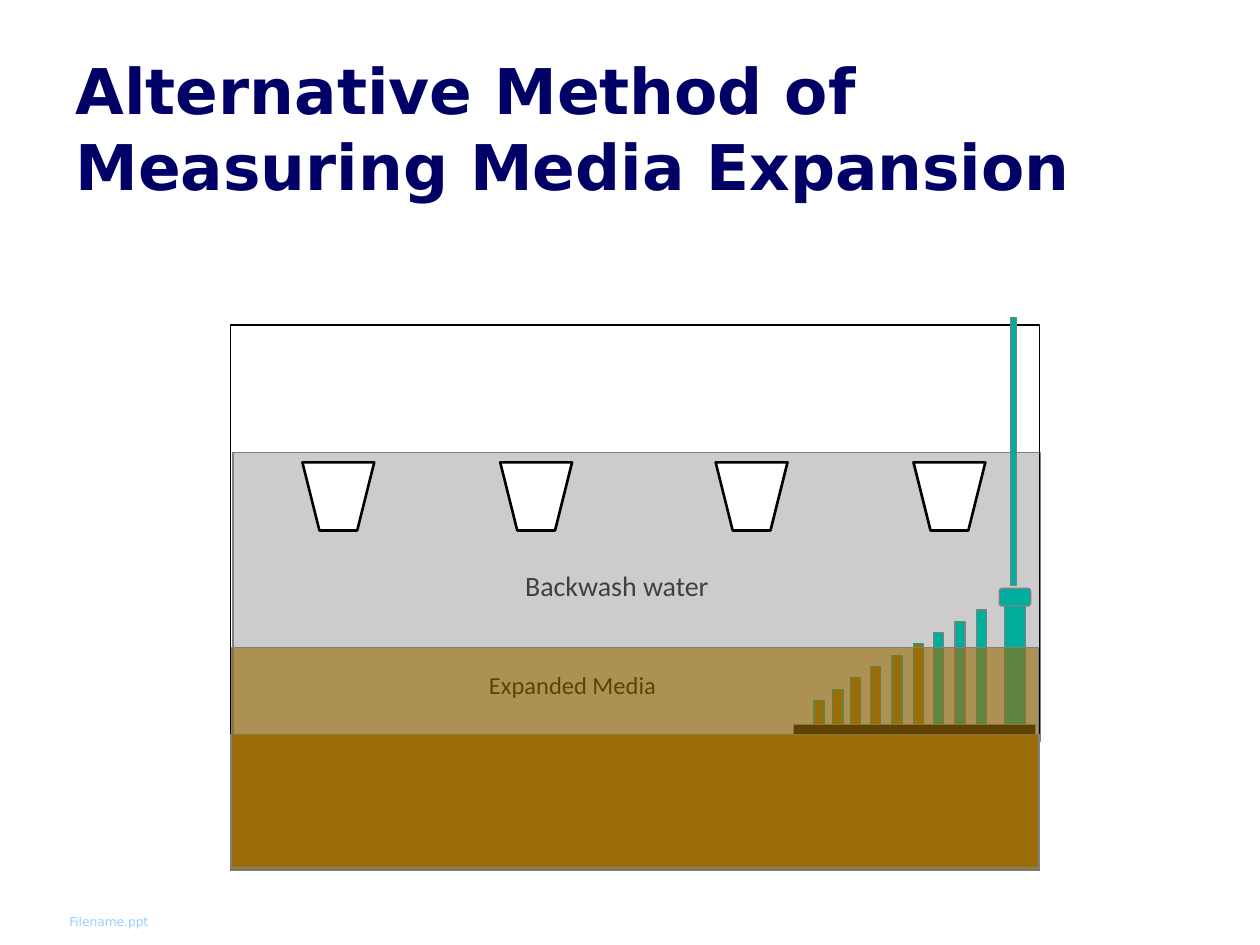
from lxml import etree
from pptx import Presentation
from pptx.dml.color import RGBColor
from pptx.enum import shapes, text
from pptx.oxml import ns
from pptx.util import Inches, Pt

COLORS = {
    "title": "000066", "footer": "99CCFF", "water": "CCCCCC", "media": "9A6D08",
    "gauge": "00AE9D", "outline": "808080", "black": "000000", "white": "FFFFFF",
    "label": "404040",
}
SHAPE = shapes.MSO_SHAPE


def rgb(name):
    return RGBColor.from_string(COLORS[name])


def add_block(s, x, y, w, h, fill, line="outline", kind=SHAPE.RECTANGLE, weight=0.75):
    sp = s.shapes.add_shape(kind, Inches(x), Inches(y), Inches(w), Inches(h))
    sp.shadow.inherit = False
    if fill:
        sp.fill.solid()
        sp.fill.fore_color.rgb = rgb(fill)
    else:
        sp.fill.background()
    sp.line.color.rgb = rgb(line)
    sp.line.width = Pt(weight)
    return sp


def set_opacity(sp, percent):
    color = sp.fill._xPr.find(".//" + ns.qn("a:srgbClr"))
    etree.SubElement(color, ns.qn("a:alpha"), val=str(percent * 1000))


def style(p, font, size, color, bold=False):
    p.font.name = font
    p.font.size = Pt(size)
    p.font.color.rgb = rgb(color)
    p.font.bold = bold


def add_label(s, x, y, w, h, words, size, color, font="Calibri"):
    tf = s.shapes.add_textbox(Inches(x), Inches(y), Inches(w), Inches(h)).text_frame
    tf.word_wrap = False
    tf.text = words
    style(tf.paragraphs[0], font, size, color)
    return tf


def place_title(s, x, y, w, h):
    title = s.shapes.title
    title.left, title.top, title.width, title.height = map(Inches, (x, y, w, h))
    tf = title.text_frame
    tf.text = "Alternative Method of Measuring Media Expansion"
    tf.auto_size = text.MSO_AUTO_SIZE.NONE
    tf.vertical_anchor = text.MSO_ANCHOR.TOP
    tf.margin_top = Inches(0.08)
    p = tf.paragraphs[0]
    p.alignment = text.PP_ALIGN.LEFT
    style(p, "DejaVu Sans", 36, "title", bold=True)


def add_footer(s, x, y, w, h):
    tf = add_label(s, x, y, w, h, "Filename.ppt", 7, "footer", "DejaVu Sans")
    tf.word_wrap = True
    tf.vertical_anchor = text.MSO_ANCHOR.BOTTOM
    tf.margin_left = tf.margin_right = tf.margin_top = tf.margin_bottom = Inches(0.05)


def add_basin(s, x, y, w, h):
    """Filter basin with settled media at the bottom and four wash troughs."""
    media_h = h / 4
    add_block(s, x, y, w, h, None, "black")
    add_block(s, x, y + h - media_h, w, media_h, "media")
    for dx in (0.57, 2.14, 3.85, 5.42):
        trough = add_block(s, x + dx, y + 1.09, 0.57, 0.54, "white", "black",
                           SHAPE.TRAPEZOID, 1.5)
        trough.rotation = 180
    tf = add_label(s, x + 1.88, y + 2.69, 1.67, 0.34, "Expanded Media", 14, "black")
    tf.paragraphs[0].alignment = text.PP_ALIGN.CENTER


def add_gauge(s, x, y, w, h):
    """Row of stepped tubes on a base plate, next to a capped post."""
    base_h = 0.08
    add_block(s, x + 1.67, y + 0.08, 0.17, 1, "gauge")
    add_block(s, x + 1.63, y, 0.25, 0.14, "gauge", kind=SHAPE.ROUNDED_RECTANGLE)
    tube_lefts = (1.45, 1.28, 1.11, 0.95, 0.78, 0.61, 0.45, 0.31, 0.16)
    tallest, step, above_media = 0.91, 0.09, 3
    for i, dx in enumerate(tube_lefts):
        tube_h = tallest - i * step
        fill, line = ("gauge", "outline") if i < above_media else ("media", "gauge")
        add_block(s, x + dx, y + h - base_h - tube_h, 0.08, tube_h, fill, line)
    add_block(s, x, y + h - base_h, w, base_h, "black")


def main():
    prs = Presentation()
    prs.slide_width, prs.slide_height = Inches(10), Inches(7.5)
    s = prs.slides.add_slide(prs.slide_layouts[5])
    place_title(s, 0.5, 0.33, 9, 0.83)
    add_footer(s, 0.5, 7.2, 2.67, 0.22)
    add_block(s, 1.85, 3.59, 6.41, 2.29, "water")
    add_basin(s, 1.83, 2.58, 6.42, 4.33)
    add_gauge(s, 6.3, 4.67, 1.92, 1.16)
    expanded = add_block(s, 1.84, 5.14, 6.4, 1.75, "media")
    set_opacity(expanded, 61)
    add_block(s, 8.02, 2.52, 0.05, 2.13, "gauge")
    add_label(s, 4.07, 4.46, 1.83, 0.37, "Backwash water", 16, "label")
    prs.save("out.pptx")


if __name__ == "__main__":
    main()
